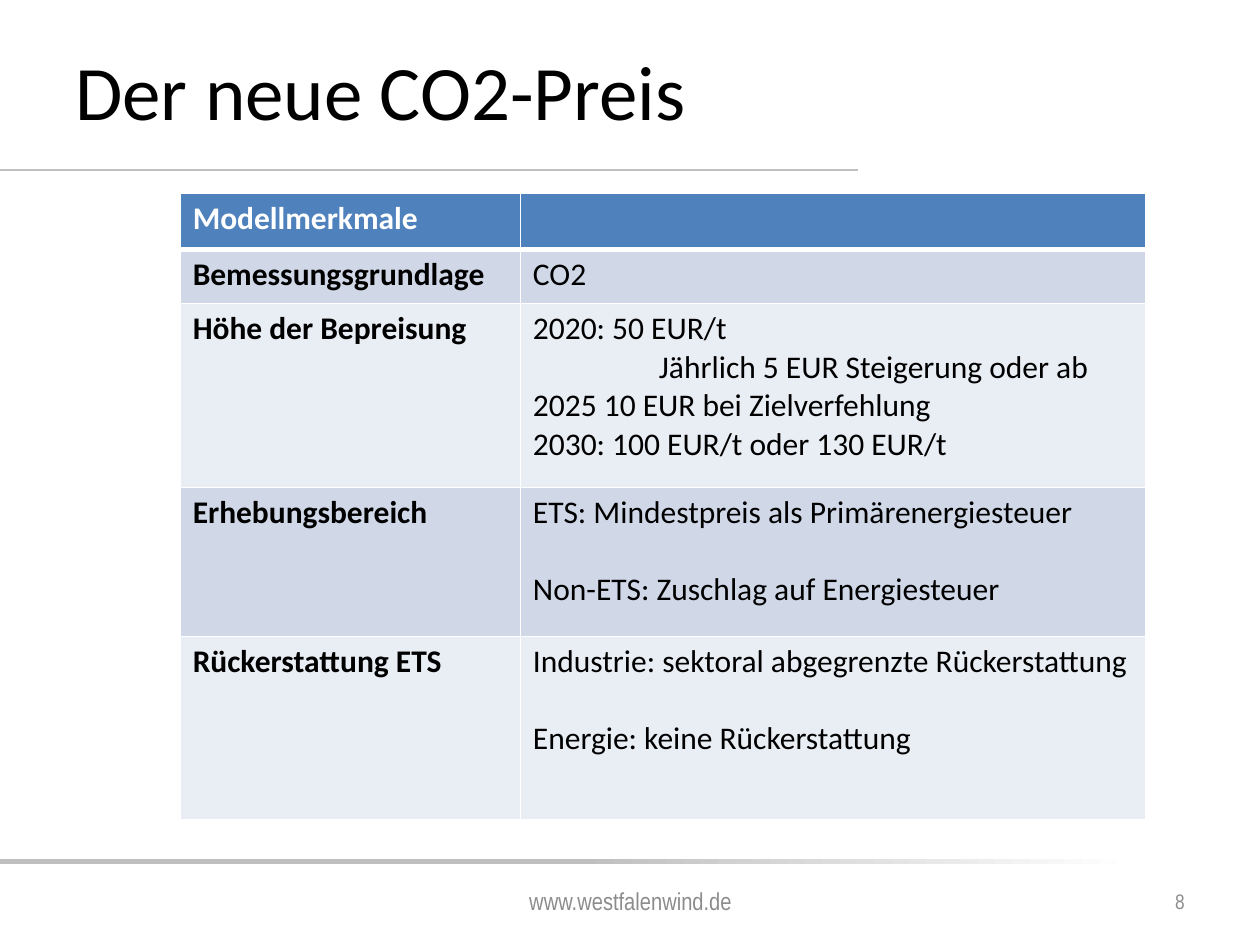
import copy

import pptx
import pptx.dml.color
import pptx.enum.shapes
import pptx.enum.text
import pptx.oxml
import pptx.oxml.ns
import pptx.util
from pptx.util import Inches

COLORS = {"rule": "BFBFBF", "white": "FFFFFF", "black": "000000", "footer": "8C8C8C",
          "header": "4F81BD", "dark_band": "D0D8E8", "light_band": "E9EDF4"}
ALIGN = pptx.enum.text.PP_ALIGN
ANCHOR = pptx.enum.text.MSO_ANCHOR
COLUMN_WIDTHS = [2.7, 4.96]
ROW_HEIGHTS = [0.45, 0.43, 1.46, 1.18, 1.46]
ROWS = [
    ("Modellmerkmale", []),
    ("Bemessungsgrundlage", [("CO2", {})]),
    ("Höhe der Bepreisung", [
        ("2020: 50 EUR/t", {}),
        ("Jährlich 5 EUR Steigerung oder ab 2025 10 EUR bei Zielverfehlung", {"indent": 1}),
        ("2030: 100 EUR/t oder 130 EUR/t", {})]),
    ("Erhebungsbereich", [
        ("ETS: Mindestpreis als Primärenergiesteuer", {}),
        ("Non-ETS: Zuschlag auf Energiesteuer", {"space_before": 22})]),
    ("Rückerstattung ETS", [
        ("Industrie: sektoral abgegrenzte Rückerstattung", {}),
        ("Energie: keine Rückerstattung", {"space_before": 22})]),
]


def rgb(name):
    """Return the named colour."""
    return pptx.dml.color.RGBColor.from_string(COLORS[name])


def write_text(paragraph, text, size=18, font="Calibri", color="black", bold=False,
               align=ALIGN.LEFT, indent=0, space_before=0):
    """Write formatted text into a paragraph."""
    if indent:
        properties = paragraph._p.get_or_add_pPr()
        properties.set("marL", "0")
        properties.set("indent", str(Inches(indent)))
    paragraph.alignment = align
    if space_before:
        paragraph.space_before = pptx.util.Pt(space_before)
    run = paragraph.add_run()
    run.text = text
    run.font.size = pptx.util.Pt(size)
    run.font.name = font
    run.font.bold = bold
    run.font.color.rgb = rgb(color)


def add_text_box(slide, box, text, anchor=ANCHOR.MIDDLE, **text_format):
    """Add a wrapped text box with one paragraph."""
    frame = slide.shapes.add_textbox(*map(Inches, box)).text_frame
    frame.word_wrap = True
    frame.vertical_anchor = anchor
    write_text(frame.paragraphs[0], text, **text_format)


def add_title(slide, left, top, width, height):
    """Add the title and the rule under it."""
    rule_top = Inches(top + 1.05)
    rule = slide.shapes.add_connector(
        pptx.enum.shapes.MSO_CONNECTOR.STRAIGHT, 0, rule_top, Inches(left + 6.31), rule_top)
    rule.line.color.rgb = rgb("rule")
    rule.line.width = pptx.util.Pt(1.5)
    rule._element.spPr.append(pptx.oxml.parse_xml(
        f'<a:effectLst {pptx.oxml.ns.nsdecls("a")}/>'))
    add_text_box(slide, (left, top, width, height), "Der neue CO2-Preis",
                 anchor=ANCHOR.TOP, size=44)


def add_footer(slide, left, top, width, height):
    """Add the fading bar, web address and page number."""
    bar = slide.shapes.add_shape(pptx.enum.shapes.MSO_SHAPE.RECTANGLE,
                                 *map(Inches, (left, top, width, 0.04)))
    bar.shadow.inherit = False
    bar.line.fill.background()
    bar.fill.gradient()
    bar.fill.gradient_angle = 0
    first_stop = bar.fill.gradient_stops[0]._gs
    first_stop.addnext(copy.deepcopy(first_stop))
    stops = [(0, "rule"), (0.46, "rule"), (0.9, "white")]
    for stop, (position, color) in zip(bar.fill.gradient_stops, stops):
        stop.position = position
        stop.color.rgb = rgb(color)
    text_top, text_height = top + 0.13, height - 0.13
    add_text_box(slide, (left + 3.42, text_top, 3.17, text_height), "www.westfalenwind.de",
                 size=14, font="Arial Narrow", color="footer", align=ALIGN.CENTER)
    add_text_box(slide, (left + 7.17, text_top, 2.33, text_height), "8",
                 size=12, font="Arial Narrow", color="footer", align=ALIGN.RIGHT)


def style_cell(cell, fill, top_width, bottom_width):
    """Give a cell its white borders and fill."""
    properties = cell._tc.get_or_add_tcPr()
    widths = {"lnL": 1, "lnR": 1, "lnT": top_width, "lnB": bottom_width}
    for side, width in widths.items():
        properties.append(pptx.oxml.parse_xml(
            f'<a:{side} {pptx.oxml.ns.nsdecls("a")} w="{pptx.util.Pt(width)}"><a:solidFill>'
            f'<a:srgbClr val="{COLORS["white"]}"/></a:solidFill></a:{side}>'))
    cell.fill.solid()
    cell.fill.fore_color.rgb = rgb(fill)


def add_price_table(slide, left, top, width, height):
    """Add the table of price model features."""
    table = slide.shapes.add_table(len(ROWS), len(COLUMN_WIDTHS),
                                   *map(Inches, (left, top, width, height))).table
    for column, column_width in zip(table.columns, COLUMN_WIDTHS):
        column.width = Inches(column_width)
    for index, (label, details) in enumerate(ROWS):
        table.rows[index].height = Inches(ROW_HEIGHTS[index])
        is_header = index == 0
        fill = "header" if is_header else ("light_band", "dark_band")[index % 2]
        for cell in table.rows[index].cells:
            style_cell(cell, fill, 3 if index == 1 else 1, 3 if is_header else 1)
        label_cell, detail_cell = table.rows[index].cells
        write_text(label_cell.text_frame.paragraphs[0], label, bold=True,
                   color="white" if is_header else "black")
        frame = detail_cell.text_frame
        for number, (text, text_format) in enumerate(details):
            paragraph = frame.add_paragraph() if number else frame.paragraphs[0]
            write_text(paragraph, text, **text_format)


def main():
    """Build and save the presentation."""
    presentation = pptx.Presentation()
    presentation.slide_width = Inches(10)
    presentation.slide_height = Inches(7.5)
    slide = presentation.slides.add_slide(presentation.slide_layouts[6])
    add_title(slide, 0.5, 0.3, 9, 1.25)
    add_footer(slide, 0, 6.82, 10, 0.53)
    add_price_table(slide, 1.43, 1.53, sum(COLUMN_WIDTHS), sum(ROW_HEIGHTS))
    presentation.save("out.pptx")


if __name__ == "__main__":
    main()
